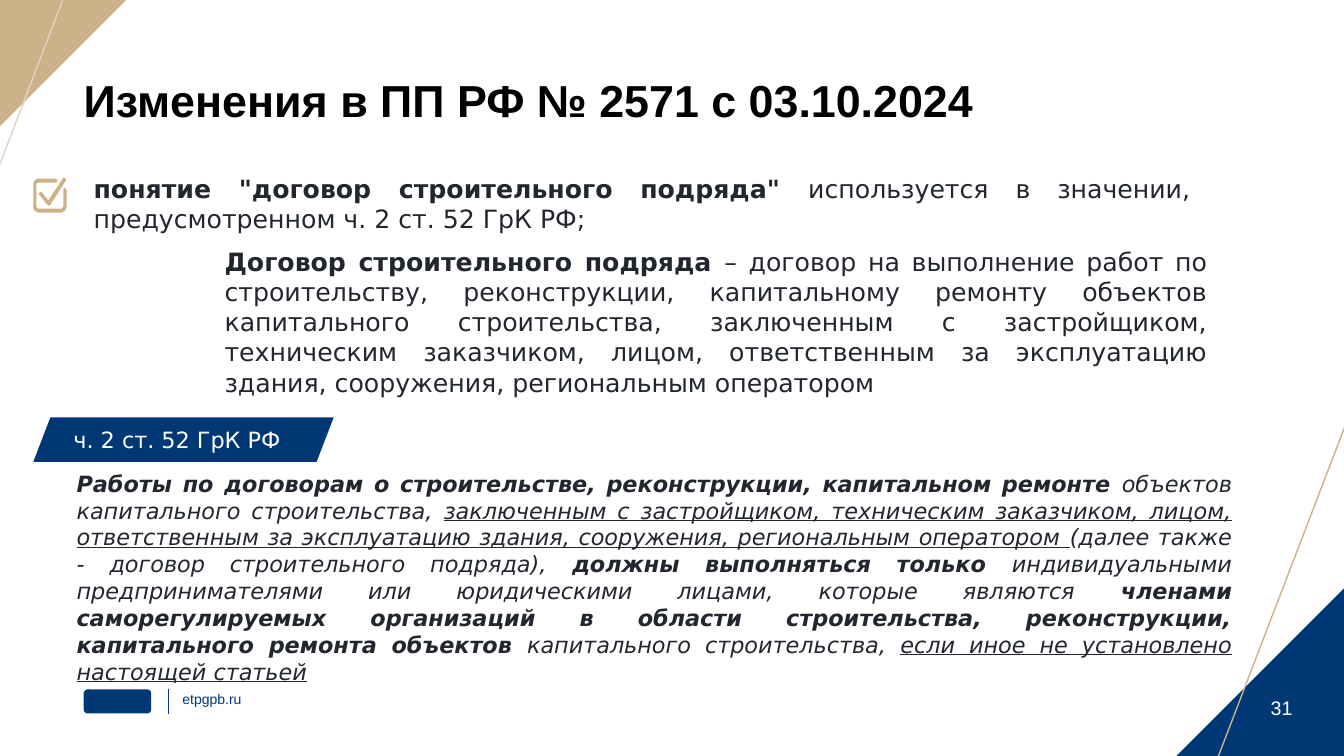
from lxml import etree
from pptx import Presentation
from pptx.dml.color import RGBColor
from pptx.enum.shapes import MSO_CONNECTOR, MSO_SHAPE
from pptx.enum.text import MSO_ANCHOR as Anchor, PP_ALIGN as Align
from pptx.oxml.ns import qn
from pptx.util import Cm, Pt

NAVY, SAND, PALE_SAND = "003876", "CCB289", "E3D2C0"
INK, WHITE, BLACK = "22272F", "FFFFFF", "000000"


def paint(shape, color):
    shape.shadow.inherit = False
    shape.fill.solid()
    shape.fill.fore_color.rgb = RGBColor.from_string(color)
    shape.line.fill.background()


def write(shape, runs, size, color=INK, font="DejaVu Sans", align=Align.LEFT,
          anchor=Anchor.TOP, insets=(0, 0), spacing=None):
    """Fill a shape with one paragraph of (text, style) runs; style letters are b, i and u."""
    frame = shape.text_frame
    frame.word_wrap = True
    frame.vertical_anchor = anchor
    frame.margin_left = frame.margin_right = Cm(insets[0])
    frame.margin_top = frame.margin_bottom = Cm(insets[1])
    paragraph = frame.paragraphs[0]
    paragraph.alignment = align
    paragraph.line_spacing = spacing
    for text, style in runs:
        run = paragraph.add_run()
        run.text = text
        run.font.name = font
        run.font.size = Pt(size)
        run.font.color.rgb = RGBColor.from_string(color)
        run.font.bold = "b" in style
        run.font.italic = "i" in style
        run.font.underline = "u" in style


presentation = Presentation()
presentation.slide_width, presentation.slide_height = Cm(33.87), Cm(19.05)
slide = presentation.slides.add_slide(presentation.slide_layouts[6])
shapes = slide.shapes

# Corner triangles
for left, top, side, rotation, color in [
    (29.62, 14.81, 4.27, 0, NAVY),
    (0, 0, 3.18, 180, SAND),
]:
    corner = shapes.add_shape(MSO_SHAPE.ISOSCELES_TRIANGLE, Cm(left), Cm(top), Cm(side), Cm(side))
    corner.adjustments[0] = 1
    corner.rotation = rotation
    paint(corner, color)

# Slanted corner lines and the footer divider
for start_x, start_y, end_x, end_y, color, width in [
    (33.96, 10.57, 30.61, 19.3, SAND, 1),
    (1.65, -0.18, -0.13, 4.47, PALE_SAND, 1),
    (4.24, 17.37, 4.24, 17.98, NAVY, 0.5),
]:
    line = shapes.add_connector(MSO_CONNECTOR.STRAIGHT, Cm(start_x), Cm(start_y), Cm(end_x), Cm(end_y))
    line.line.color.rgb = RGBColor.from_string(color)
    line.line.width = Pt(width)
    etree.SubElement(line.element.spPr, qn("a:effectLst"))

# Footer
emblem = shapes.add_shape(MSO_SHAPE.ROUNDED_RECTANGLE, Cm(2.11), Cm(17.37), Cm(1.7), Cm(0.61))
paint(emblem, NAVY)
site = shapes.add_textbox(Cm(4.6), Cm(17.4), Cm(2.79), Cm(0.43))
write(site, [("etpgpb.ru", "")], 10, NAVY, "Arial")
page_number = shapes.add_textbox(Cm(31.27), Cm(17.22), Cm(2.06), Cm(0.91))
write(page_number, [("31", "")], 14, WHITE, "Arial", Align.CENTER, Anchor.BOTTOM)

title = shapes.add_textbox(Cm(2.11), Cm(1.98), Cm(29.62), Cm(1.22))
write(title, [("Изменения в ПП РФ № 2571 с 03.10.2024", "b")], 32, BLACK, "Arial", spacing=0.9)

# Checkbox icon, in hundredths of a centimetre
box_outline = [
    (97, 450), (142, 450), (145, 455), (142, 460), (96, 460), (92, 463), (92, 521),
    (96, 526), (155, 526), (160, 521), (160, 478), (163, 473), (168, 478), (168, 521),
    (164, 531), (155, 536), (97, 536), (87, 531), (84, 521), (84, 463), (88, 453),
]
tick_outline = [
    (160, 447), (168, 452), (127, 516), (123, 518), (119, 516), (97, 488), (104, 483), (122, 505),
]
builder = shapes.build_freeform(*box_outline[0], scale=Cm(0.01))
builder.add_line_segments(box_outline[1:], close=True)
builder.move_to(*tick_outline[0])
builder.add_line_segments(tick_outline[1:], close=True)
paint(builder.convert_to_shape(), SAND)

# Body text
concept = [
    ('понятие "договор строительного подряда" ', "b"),
    ("используется в значении, предусмотренном ч. 2 ст. 52 ГрК РФ;", ""),
]
definition = [
    ("Договор строительного подряда ", "b"),
    ("– договор на выполнение работ по строительству, реконструкции, капитальному ремонту "
     "объектов капитального строительства, заключенным с застройщиком, техническим заказчиком, "
     "лицом, ответственным за эксплуатацию здания, сооружения, региональным оператором", ""),
]
law_quote = [
    ("Работы по договорам о строительстве, реконструкции, капитальном ремонте ", "bi"),
    ("объектов капитального строительства, ", "i"),
    ("заключенным с застройщиком, техническим заказчиком, лицом, ответственным за эксплуатацию "
     "здания, сооружения, региональным оператором ", "iu"),
    ("(далее также - договор строительного подряда), ", "i"),
    ("должны выполняться только ", "bi"),
    ("индивидуальными предпринимателями или юридическими лицами, которые являются ", "i"),
    ("членами саморегулируемых организаций в области строительства, реконструкции, "
     "капитального ремонта объектов ", "bi"),
    ("капитального строительства, ", "i"),
    ("если иное не установлено настоящей статьей", "iu"),
]
for left, top, width, height, size, runs in [
    (2.11, 4.24, 28.14, 4.11, 18, concept),
    (5.41, 6.07, 25.27, 5.64, 18, definition),
    (1.68, 11.71, 29.62, 5.74, 16, law_quote),
]:
    body = shapes.add_textbox(Cm(left), Cm(top), Cm(width), Cm(height))
    write(body, runs, size, align=Align.JUSTIFY, insets=(0.25, 0.13))

law_label = shapes.add_shape(MSO_SHAPE.PARALLELOGRAM, Cm(0.84), Cm(10.52), Cm(7.57), Cm(1.12))
law_label.adjustments[0] = 0.384
paint(law_label, NAVY)
write(law_label, [("ч. 2 ст. 52 ГрК РФ", "")], 16, WHITE, anchor=Anchor.MIDDLE, insets=(0.2, 0.1))

presentation.save("out.pptx")
